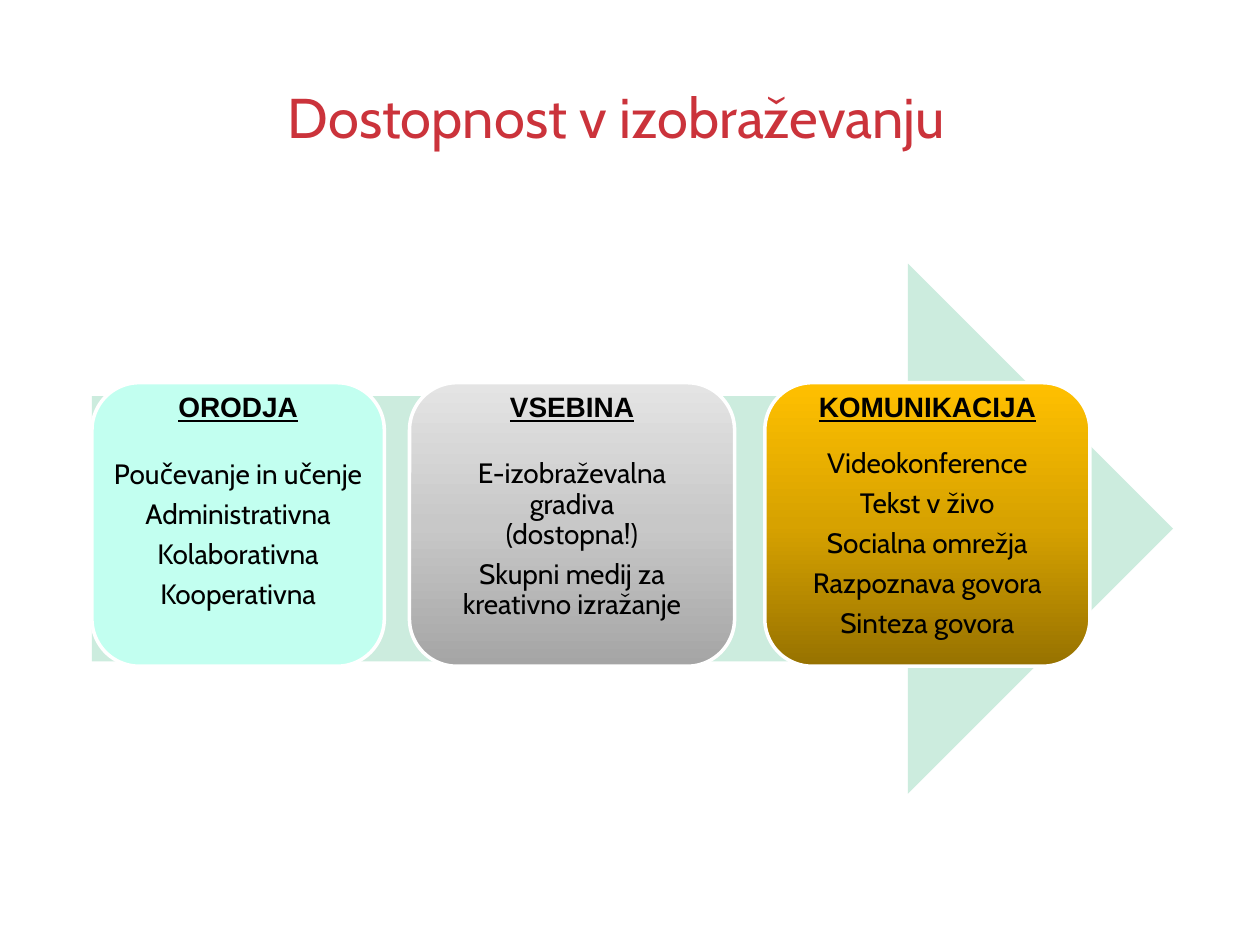
import pptx
import pptx.util
from lxml import etree
from pptx.dml.color import RGBColor
from pptx.enum.shapes import MSO_SHAPE
from pptx.enum.text import MSO_ANCHOR, PP_ALIGN
from pptx.oxml.ns import qn

WIDTH, HEIGHT = pptx.util.Inches(10), pptx.util.Inches(7.5)
LEFT = 0.073
CARD_TOP, CARD_HEIGHT = 0.405, 0.3
HEADING_HEIGHT = 0.05
BODY_FONT, HEADING_FONT = "Cabin", "Arial"

RED = RGBColor(0xCB, 0x33, 0x3B)
BLACK = RGBColor(0, 0, 0)
WHITE = RGBColor(0xFF, 0xFF, 0xFF)
PALE_GREEN = RGBColor(0xCC, 0xEC, 0xDE)
MINT = RGBColor(0xC2, 0xFF, 0xF0)
GREYS = (RGBColor(0xA5, 0xA5, 0xA5), RGBColor(0xC8, 0xC8, 0xC8), RGBColor(0xE4, 0xE4, 0xE4))
GOLDS = (RGBColor(0x97, 0x72, 0), RGBColor(0xD7, 0xA2, 0), RGBColor(0xFF, 0xC0, 0))

# left and width as shares of the slide, fill colours from bottom to top,
# side and top insets in inches, heading, lines
CARDS = [
    (LEFT, 0.232, (MINT,), 0.03, 0.24, "ORODJA",
     ["Poučevanje in učenje", "Administrativna", "Kolaborativna", "Kooperativna"]),
    (0.325, 0.258, GREYS, 0.1, 0.32, "VSEBINA",
     ["E-izobraževalna gradiva\v(dostopna!)", "Skupni medij za kreativno izražanje"]),
    (0.607, 0.258, GOLDS, 0.07, 0.39, "KOMUNIKACIJA",
     ["Videokonference", "Tekst v živo", "Socialna omrežja", "Razpoznava govora",
      "Sinteza govora"]),
]


def place(left, top, width, height):
    """Turn shares of the slide into lengths."""
    return int(left * WIDTH), int(top * HEIGHT), int(width * WIDTH), int(height * HEIGHT)


def style(para, font, size, color):
    para.alignment = PP_ALIGN.CENTER
    for span in para.runs:
        span.font.name = font
        span.font.size = pptx.util.Pt(size)
        span.font.color.rgb = color


def fill_upward(shape, colors):
    """Fill with one colour, or with an even gradient from bottom to top."""
    if len(colors) == 1:
        shape.fill.solid()
        shape.fill.fore_color.rgb = colors[0]
        return
    shape.fill.gradient()
    shape.fill.gradient_angle = 90
    stops = shape._element.spPr.find(qn("a:gradFill")).find(qn("a:gsLst"))
    for stop in list(stops):
        stops.remove(stop)
    for index, color in enumerate(colors):
        position = 100000 * index // (len(colors) - 1)
        stop = etree.SubElement(stops, qn("a:gs"), pos=str(position))
        etree.SubElement(stop, qn("a:srgbClr"), val=str(color))


def add_label(page, area, text, font, size, color):
    box = page.shapes.add_textbox(*place(*area))
    frame = box.text_frame
    frame.word_wrap = True
    frame.vertical_anchor = MSO_ANCHOR.MIDDLE
    frame.text = text
    style(frame.paragraphs[0], font, size, color)
    return box


def add_arrow(page):
    arrow = page.shapes.add_shape(MSO_SHAPE.RIGHT_ARROW, *place(LEFT, 0.279, 0.858, 0.561))
    arrow.adjustments[0] = 0.5
    arrow.adjustments[1] = 0.5
    arrow.shadow.inherit = False
    fill_upward(arrow, (PALE_GREEN,))
    arrow.line.fill.background()


def add_card(page, left, width, colors, side, top, heading, lines):
    card = page.shapes.add_shape(
        MSO_SHAPE.ROUNDED_RECTANGLE, *place(left, CARD_TOP, width, CARD_HEIGHT))
    card.shadow.inherit = False
    fill_upward(card, colors)
    card.line.color.rgb = WHITE
    card.line.width = pptx.util.Pt(2)

    frame = card.text_frame
    frame.word_wrap = True
    frame.vertical_anchor = MSO_ANCHOR.MIDDLE
    frame.margin_left = frame.margin_right = pptx.util.Inches(side)
    frame.margin_bottom = pptx.util.Inches(0.07)
    frame.margin_top = pptx.util.Inches(top)
    frame.text = "\n".join(lines)
    for para in frame.paragraphs:
        para.line_spacing = 0.9
        para.space_after = pptx.util.Pt(5.6)
        style(para, BODY_FONT, 16, BLACK)

    label = add_label(page, (left, CARD_TOP, width, HEADING_HEIGHT),
                      heading, HEADING_FONT, 16, BLACK)
    font = label.text_frame.paragraphs[0].runs[0].font
    font.bold = font.underline = True


def main():
    deck = pptx.Presentation()
    deck.slide_width, deck.slide_height = WIDTH, HEIGHT
    page = deck.slides.add_slide(deck.slide_layouts[6])
    add_label(page, (LEFT, 0.05, 0.833, 0.145), "Dostopnost v izobraževanju",
              BODY_FONT, 32, RED)
    add_arrow(page)
    for card in CARDS:
        add_card(page, *card)
    deck.save("out.pptx")


if __name__ == "__main__":
    main()
